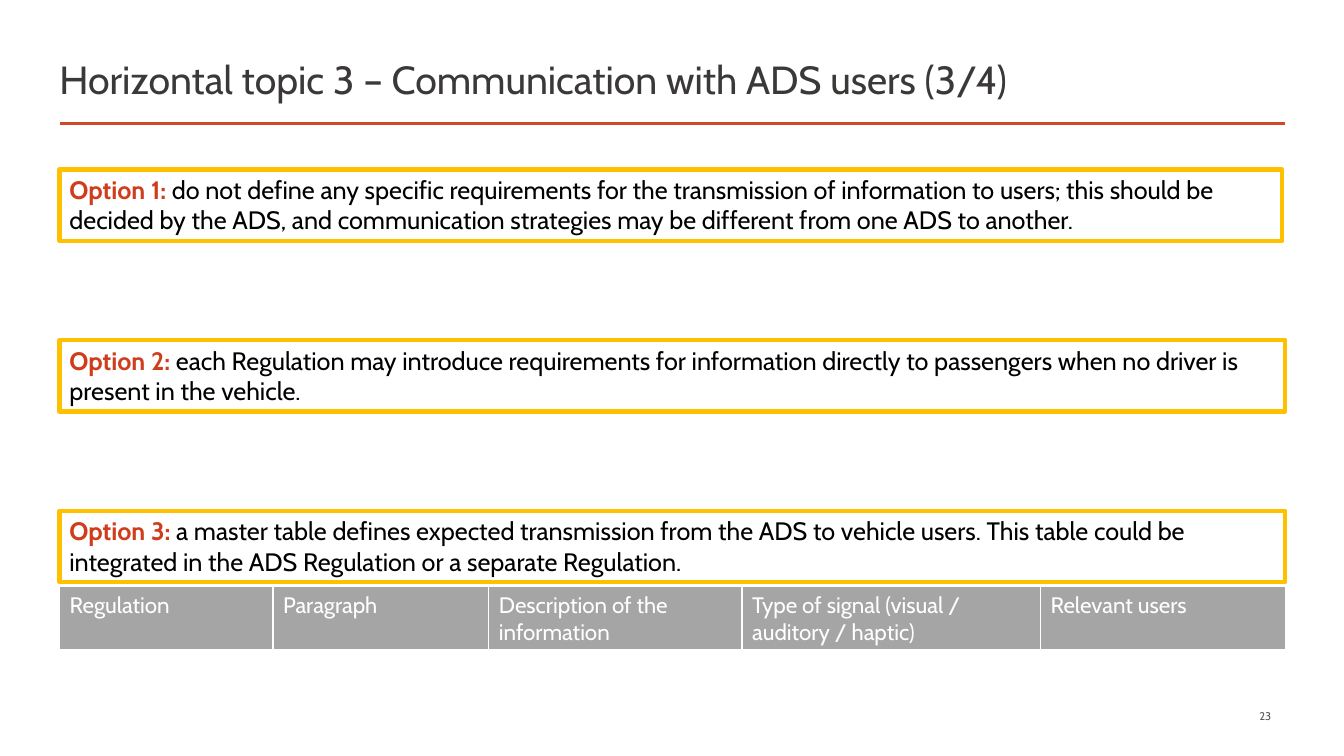
from dataclasses import dataclass
from typing import Any

import lxml.etree
import pptx
import pptx.dml.color
import pptx.enum.shapes
import pptx.enum.text
import pptx.oxml.ns
import pptx.util

Cm = pptx.util.Cm
Pt = pptx.util.Pt
ALIGN = pptx.enum.text.PP_ALIGN
ANCHOR = pptx.enum.text.MSO_ANCHOR


@dataclass(frozen=True)
class Theme:
    font: str = "Cabin"
    title: str = "3B3838"
    rule: str = "D24726"
    label: str = "CF3D1C"
    body: str = "000000"
    frame: str = "FFC000"
    header: str = "A5A5A5"
    white: str = "FFFFFF"
    number: str = "595959"
    title_size: int = 28
    option_size: int = 18
    header_size: int = 16
    number_size: int = 8


@dataclass(frozen=True)
class Option:
    label: str
    text: str
    width: float


@dataclass(frozen=True)
class Column:
    heading: str
    width: float


@dataclass(frozen=True)
class Caption:
    text: str
    left: float
    top: float
    width: float
    height: float
    size: int
    color: str
    align: Any


THEME = Theme()
LEFT = 1.5
CONTENT_WIDTH = 30.89
RULE_TOP = 3.12
OPTION_TOP = 4.27
OPTION_PITCH = 4.3
OPTION_HEIGHT = 1.8
TABLE_TOP = 14.78
TABLE_HEIGHT = 1.6

CAPTIONS = [
    Caption("Horizontal topic 3 – Communication with ADS users (3/4)",
            1.25, 1.2, 31.14, 1.55, THEME.title_size, THEME.title, ALIGN.LEFT),
    Caption("23", 23.19, 17.86, 9.1, 0.38,
            THEME.number_size, THEME.number, ALIGN.RIGHT),
]

OPTIONS = [
    Option("Option 1: ",
           "do not define any specific requirements for the transmission of "
           "information to users; this should be decided by the ADS, and "
           "communication strategies may be different from one ADS to another.",
           30.81),
    Option("Option 2: ",
           "each Regulation may introduce requirements for information directly "
           "to passengers when no driver is present in the vehicle.",
           CONTENT_WIDTH),
    Option("Option 3: ",
           "a master table defines expected transmission from the ADS to vehicle "
           "users. This table could be integrated in the ADS Regulation or a "
           "separate Regulation.",
           CONTENT_WIDTH),
]

COLUMNS = [
    Column("Regulation", 5.38),
    Column("Paragraph", 5.44),
    Column("Description of the information", 6.38),
    Column("Type of signal (visual / auditory / haptic)", 7.52),
    Column("Relevant users", 6.17),
]

BORDERS = {"a:lnL": 1, "a:lnR": 1, "a:lnT": 1, "a:lnB": 3}


def rgb(color: str) -> Any:
    return pptx.dml.color.RGBColor.from_string(color)


def apply_format(target: Any, values: dict[str, Any]) -> None:
    for attribute, value in values.items():
        setattr(target, attribute, value)


def add_run(paragraph: Any, text: str, size: int, color: str,
            bold: bool = False) -> None:
    run = paragraph.add_run()
    run.text = text
    apply_format(run.font, {"name": THEME.font, "size": Pt(size), "bold": bold})
    run.font.color.rgb = rgb(color)


def add_caption(slide: Any, caption: Caption) -> None:
    frame = slide.shapes.add_textbox(
        Cm(caption.left), Cm(caption.top),
        Cm(caption.width), Cm(caption.height)).text_frame
    apply_format(frame, {"word_wrap": True, "vertical_anchor": ANCHOR.MIDDLE,
                         "margin_top": 0, "margin_bottom": 0})
    paragraph = frame.paragraphs[0]
    paragraph.alignment = caption.align
    add_run(paragraph, caption.text, caption.size, caption.color)


def add_rule(slide: Any) -> None:
    rule = slide.shapes.add_connector(
        pptx.enum.shapes.MSO_CONNECTOR.STRAIGHT,
        Cm(LEFT), Cm(RULE_TOP), Cm(LEFT + CONTENT_WIDTH), Cm(RULE_TOP))
    rule.line.color.rgb = rgb(THEME.rule)
    rule.line.width = Pt(2)
    lxml.etree.SubElement(rule._element.spPr, pptx.oxml.ns.qn("a:effectLst"))


def add_option(slide: Any, option: Option, top: float) -> None:
    box = slide.shapes.add_shape(
        pptx.enum.shapes.MSO_SHAPE.RECTANGLE,
        Cm(LEFT), Cm(top), Cm(option.width), Cm(OPTION_HEIGHT))
    box.shadow.inherit = False
    box.fill.background()
    box.line.color.rgb = rgb(THEME.frame)
    box.line.width = Pt(3)
    apply_format(box.text_frame, {
        "word_wrap": True, "vertical_anchor": ANCHOR.TOP,
        "auto_size": pptx.enum.text.MSO_AUTO_SIZE.SHAPE_TO_FIT_TEXT})
    paragraph = box.text_frame.paragraphs[0]
    paragraph.alignment = ALIGN.LEFT
    add_run(paragraph, option.label, THEME.option_size, THEME.label, bold=True)
    add_run(paragraph, option.text, THEME.option_size, THEME.body)


def add_borders(cell: Any) -> None:
    properties = cell._tc.get_or_add_tcPr()
    for tag, width in BORDERS.items():
        border = lxml.etree.SubElement(
            properties, pptx.oxml.ns.qn(tag), w=str(Pt(width)))
        fill = lxml.etree.SubElement(border, pptx.oxml.ns.qn("a:solidFill"))
        lxml.etree.SubElement(
            fill, pptx.oxml.ns.qn("a:srgbClr"), val=THEME.white)


def add_master_table(slide: Any, columns: list[Column]) -> None:
    table = slide.shapes.add_table(
        1, len(columns), Cm(LEFT), Cm(TABLE_TOP),
        Cm(CONTENT_WIDTH), Cm(TABLE_HEIGHT)).table
    for index, column in enumerate(columns):
        table.columns[index].width = Cm(column.width)
        cell = table.cell(0, index)
        add_borders(cell)
        cell.fill.solid()
        cell.fill.fore_color.rgb = rgb(THEME.header)
        add_run(cell.text_frame.paragraphs[0], column.heading,
                THEME.header_size, THEME.white)


def main() -> None:
    presentation = pptx.Presentation()
    apply_format(presentation, {"slide_width": Cm(33.87),
                                "slide_height": Cm(19.05)})
    slide = presentation.slides.add_slide(presentation.slide_layouts[6])
    add_rule(slide)
    for caption in CAPTIONS:
        add_caption(slide, caption)
    for index, option in enumerate(OPTIONS):
        add_option(slide, option, OPTION_TOP + index * OPTION_PITCH)
    add_master_table(slide, COLUMNS)
    presentation.save("out.pptx")


if __name__ == "__main__":
    main()
